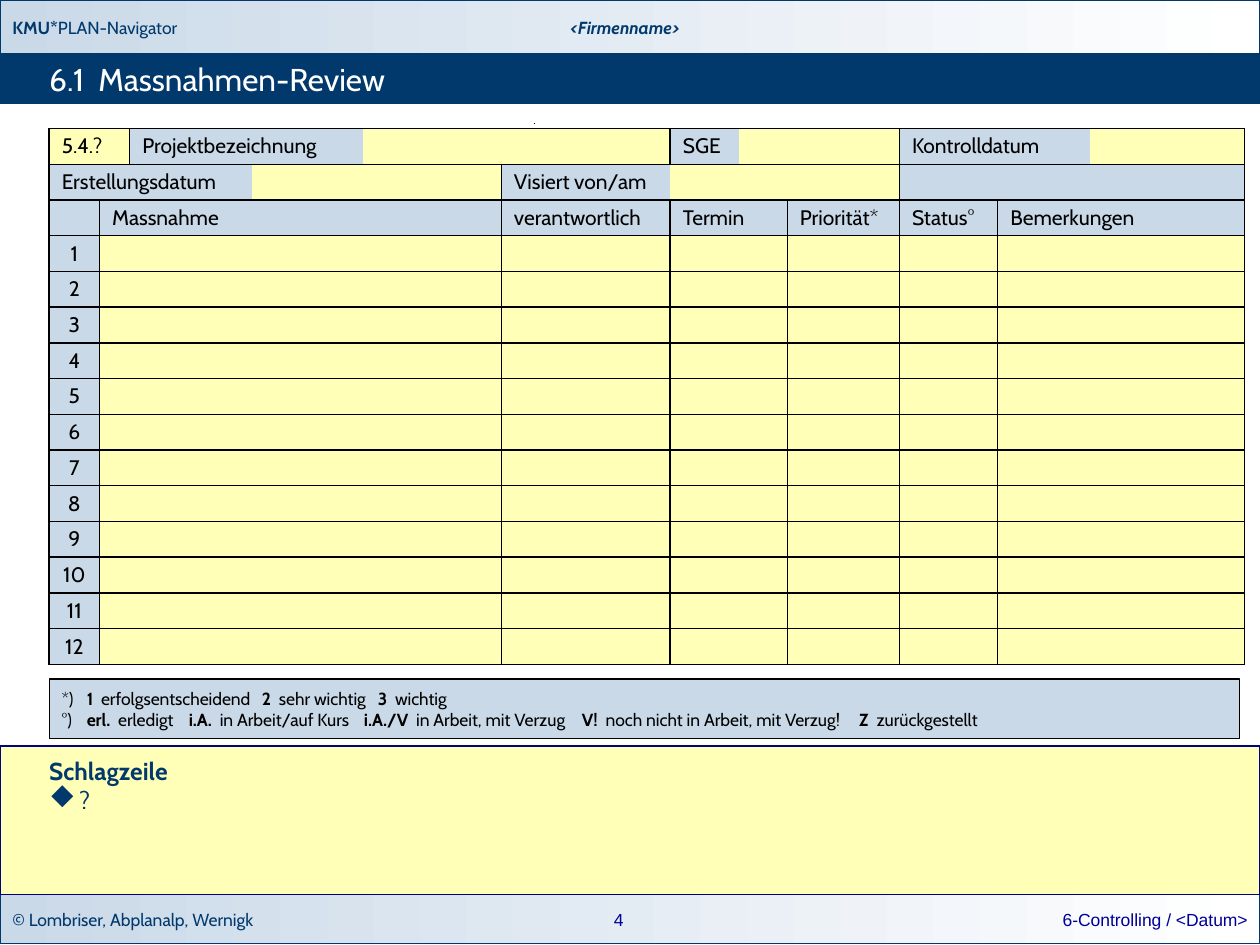
from dataclasses import dataclass
from itertools import accumulate

from lxml import etree
from pptx import Presentation
from pptx.dml.color import RGBColor
from pptx.enum.shapes import MSO_CONNECTOR, MSO_SHAPE
from pptx.enum.text import MSO_ANCHOR, PP_ALIGN
from pptx.oxml.ns import qn
from pptx.util import Inches, Pt

RECT = MSO_SHAPE.RECTANGLE
STRAIGHT = MSO_CONNECTOR.STRAIGHT
MIDDLE, TOP = MSO_ANCHOR.MIDDLE, MSO_ANCHOR.TOP
LEFT, CENTER, RIGHT = PP_ALIGN.LEFT, PP_ALIGN.CENTER, PP_ALIGN.RIGHT
NAVY = RGBColor(0x01, 0x39, 0x6C)
SKY = RGBColor(0xCA, 0xD9, 0xE8)
CREAM = RGBColor(0xFF, 0xFF, 0xB7)
WHITE = RGBColor(0xFF, 0xFF, 0xFF)
BLACK = RGBColor(0, 0, 0)
DARK_BLUE = RGBColor(0, 0, 0x80)
FOOTER_BLUE = RGBColor(0, 0, 0x99)
WIDTH, HEIGHT = Inches(10), Inches(7.5)


@dataclass(frozen=True)
class Box:
    """Position and size in percent of the slide."""
    x: float
    y: float
    w: float
    h: float

    def emu(self) -> tuple[int, int, int, int]:
        return (int(self.x * WIDTH / 100), int(self.y * HEIGHT / 100),
                int(self.w * WIDTH / 100), int(self.h * HEIGHT / 100))


@dataclass(frozen=True)
class Field:
    text: str
    span: int
    fill: RGBColor
    left: bool = True
    right: bool = True
    align: PP_ALIGN = LEFT


@dataclass(frozen=True)
class LegendItem:
    tab: float
    key: str
    meaning: str


COLUMNS = [4, 2, 9.7, 8.8, 11, 13.4, 5.5, 3.8, 8.9, 7.8, 7.3, 12.3]
ROW_SHARE = 3.74
ACTIONS = 12


def label(text: str, span: int) -> Field:
    return Field(text, span, SKY, right=False)


def entry(span: int) -> Field:
    return Field("", span, CREAM, left=False)


def action_row(number: int) -> list[Field]:
    return [Field(str(number), 1, SKY, align=CENTER)] + [
        Field("", span, CREAM) for span in (4, 1, 2, 1, 1, 2)]


ROWS = [
    [Field("5.4.?", 2, CREAM), label("Projektbezeichnung", 2), entry(2),
     label("SGE", 1), entry(2), label("Kontrolldatum", 2), entry(1)],
    [label("Erstellungsdatum", 3), entry(2), label("Visiert von/am", 1),
     entry(3), Field("", 3, SKY)],
    [Field("", 1, SKY), Field("Massnahme", 4, SKY), Field("verantwortlich", 1, SKY),
     Field("Termin", 2, SKY), Field("Priorität*", 1, SKY),
     Field("Status°", 1, SKY), Field("Bemerkungen", 2, SKY)],
] + [action_row(n) for n in range(1, ACTIONS + 1)]

LEGEND = [
    ("*)", [LegendItem(0.2, "1", "erfolgsentscheidend"),
            LegendItem(1.59, "2", "sehr wichtig"), LegendItem(2.51, "3", "wichtig")]),
    ("°)", [LegendItem(0.2, "erl.", "erledigt"),
            LegendItem(1.01, "i.A.", "in Arbeit/auf Kurs"),
            LegendItem(2.4, "i.A./V", "in Arbeit, mit Verzug"),
            LegendItem(4.13, "V!", "noch nicht in Arbeit, mit Verzug!"),
            LegendItem(6.33, "Z", "zurückgestellt")]),
]


def add_text(p, text: str, *, size: float = 10, color: RGBColor = NAVY,
             font: str = "Cabin", bold: bool = False, italic: bool = False,
             align: PP_ALIGN = LEFT) -> None:
    p.alignment = align
    r = p.add_run()
    r.text = text
    r.font.name, r.font.size = font, Pt(size)
    r.font.bold, r.font.italic = bold, italic
    r.font.color.rgb = color


def set_frame(tf, anchor: MSO_ANCHOR = MIDDLE,
              insets: tuple[float, ...] = (0.1, 0.05, 0.1, 0.05)) -> None:
    tf.word_wrap = True
    tf.vertical_anchor = anchor
    tf.margin_left, tf.margin_top, tf.margin_right, tf.margin_bottom = map(Inches, insets)


def add_panel(s, box: Box, fill: RGBColor, line: RGBColor, fade: bool = False):
    sp = s.shapes.add_shape(RECT, *box.emu())
    sp.shadow.inherit = False
    if fade:
        sp.fill.gradient()
        sp.fill.gradient_angle = 0
        for stop, color in zip(sp.fill.gradient_stops, (fill, WHITE)):
            stop.color.rgb = color
    else:
        sp.fill.solid()
        sp.fill.fore_color.rgb = fill
    sp.line.color.rgb = line
    sp.line.width = Pt(0.75)
    set_frame(sp.text_frame)
    return sp


def add_label(s, box: Box, text: str, **style) -> None:
    tf = s.shapes.add_textbox(*box.emu()).text_frame
    set_frame(tf)
    add_text(tf.paragraphs[0], text, **style)


def set_borders(cell, left: bool, right: bool) -> None:
    tc_pr = cell._tc.get_or_add_tcPr()
    sides = (("lnL", left), ("lnR", right), ("lnT", True), ("lnB", True))
    for i, (side, shown) in enumerate(sides):
        ln = etree.Element(qn(f"a:{side}"), w=str(Pt(1)))
        if shown:
            solid = etree.SubElement(ln, qn("a:solidFill"))
            etree.SubElement(solid, qn("a:srgbClr"), val=str(BLACK))
        else:
            etree.SubElement(ln, qn("a:noFill"))
        tc_pr.insert(i, ln)


def draw_field(table, row: int, col: int, field: Field) -> None:
    last = col + field.span - 1
    for c in range(col, last + 1):
        cell = table.cell(row, c)
        cell.fill.solid()
        cell.fill.fore_color.rgb = field.fill
        cell.vertical_anchor = MIDDLE
        cell.margin_top = cell.margin_bottom = Inches(0.04)
        set_borders(cell, field.left, field.right)
        p = cell.text_frame.paragraphs[0]
        if c == col and field.text:
            add_text(p, field.text, size=12, color=BLACK, align=field.align)
        else:
            etree.SubElement(p._p, qn("a:endParaRPr"), sz="1200")
    if field.span > 1:
        table.cell(row, col).merge(table.cell(row, last))


def draw_table(s) -> None:
    box = Box(3.9, 13.6, sum(COLUMNS), ROW_SHARE * len(ROWS))
    table = s.shapes.add_table(len(ROWS), len(COLUMNS), *box.emu()).table
    for column, share in zip(table.columns, COLUMNS):
        column.width = int(share * WIDTH / 100)
    for i, fields in enumerate(ROWS):
        table.rows[i].height = int(ROW_SHARE * HEIGHT / 100)
        starts = accumulate((f.span for f in fields), initial=0)
        for col, field in zip(starts, fields):
            draw_field(table, i, col, field)


def draw_headline(s) -> None:
    tf = add_panel(s, Box(0, 78.93, 100, 15.73), CREAM, DARK_BLUE).text_frame
    set_frame(tf, TOP, (0.39, 0.08, 0.2, 0.08))
    add_text(tf.paragraphs[0], "Schlagzeile", size=14, bold=True)
    p = tf.add_paragraph()
    p_pr = p._p.get_or_add_pPr()
    p_pr.set("marL", str(Inches(0.24)))
    p_pr.set("indent", str(-Inches(0.24)))
    etree.SubElement(p_pr, qn("a:buSzPct"), val="110000")
    etree.SubElement(p_pr, qn("a:buFont"), typeface="Wingdings",
                     pitchFamily="2", charset="2")
    etree.SubElement(p_pr, qn("a:buChar"), char="u")
    add_text(p, "?", size=14)


def draw_legend(s) -> None:
    tf = add_panel(s, Box(3.9, 71.87, 94.5, 6.27), SKY, BLACK).text_frame
    set_frame(tf, MIDDLE, (0.1, 0.04, 0.1, 0.04))
    for i, (mark, items) in enumerate(LEGEND):
        p = tf.add_paragraph() if i else tf.paragraphs[0]
        tabs = etree.SubElement(p._p.get_or_add_pPr(), qn("a:tabLst"))
        add_text(p, mark, color=BLACK)
        for item in items:
            etree.SubElement(tabs, qn("a:tab"), pos=str(Inches(item.tab)), algn="l")
            add_text(p, f"\t{item.key} ", color=BLACK, bold=True)
            add_text(p, f" {item.meaning}", color=BLACK)


def draw_dot(s) -> None:
    x, y, w, _ = Box(42.35, 13.07, 0.1, 0).emu()
    line = s.shapes.add_connector(STRAIGHT, x, y, x + w, y)
    line.line.color.rgb = BLACK
    line.line.width = Pt(0.75)
    etree.SubElement(line._element.spPr, qn("a:effectLst"))


def main() -> None:
    prs = Presentation()
    prs.slide_width, prs.slide_height = WIDTH, HEIGHT
    s = prs.slides.add_slide(prs.slide_layouts[5])
    footer = add_panel(s, Box(0, 94.67, 100, 5.2), SKY, NAVY, fade=True)
    add_text(footer.text_frame.paragraphs[0], "© Lombriser, Abplanalp, Wernigk")
    header = add_panel(s, Box(0, 0, 100, 5.73), SKY, NAVY, fade=True)
    add_text(header.text_frame.paragraphs[0], "KMU*", bold=True)
    add_text(header.text_frame.paragraphs[0], "PLAN-Navigator")
    add_panel(s, Box(0, 5.73, 100, 5.2), NAVY, NAVY)
    add_label(s, Box(31.9, 0, 35.4, 5.87), "<Firmenname>",
              bold=True, italic=True, align=CENTER)
    add_label(s, Box(68.3, 94.67, 31.7, 5.33), "6-Controlling / <Datum>",
              font="Arial", color=FOOTER_BLUE, align=RIGHT)
    add_label(s, Box(46.7, 94.67, 4.8, 5.2), "4",
              font="Arial", color=FOOTER_BLUE, align=CENTER)
    title = s.shapes.title
    title.left, title.top, title.width, title.height = Box(3.9, 5.73, 92.9, 5.2).emu()
    set_frame(title.text_frame, MIDDLE, (0, 0, 0, 0))
    add_text(title.text_frame.paragraphs[0], "6.1  Massnahmen-Review", size=18, color=WHITE)
    s.shapes._spTree.append(title._element)
    draw_dot(s)
    draw_table(s)
    draw_headline(s)
    draw_legend(s)
    prs.save("out.pptx")


if __name__ == "__main__":
    main()
